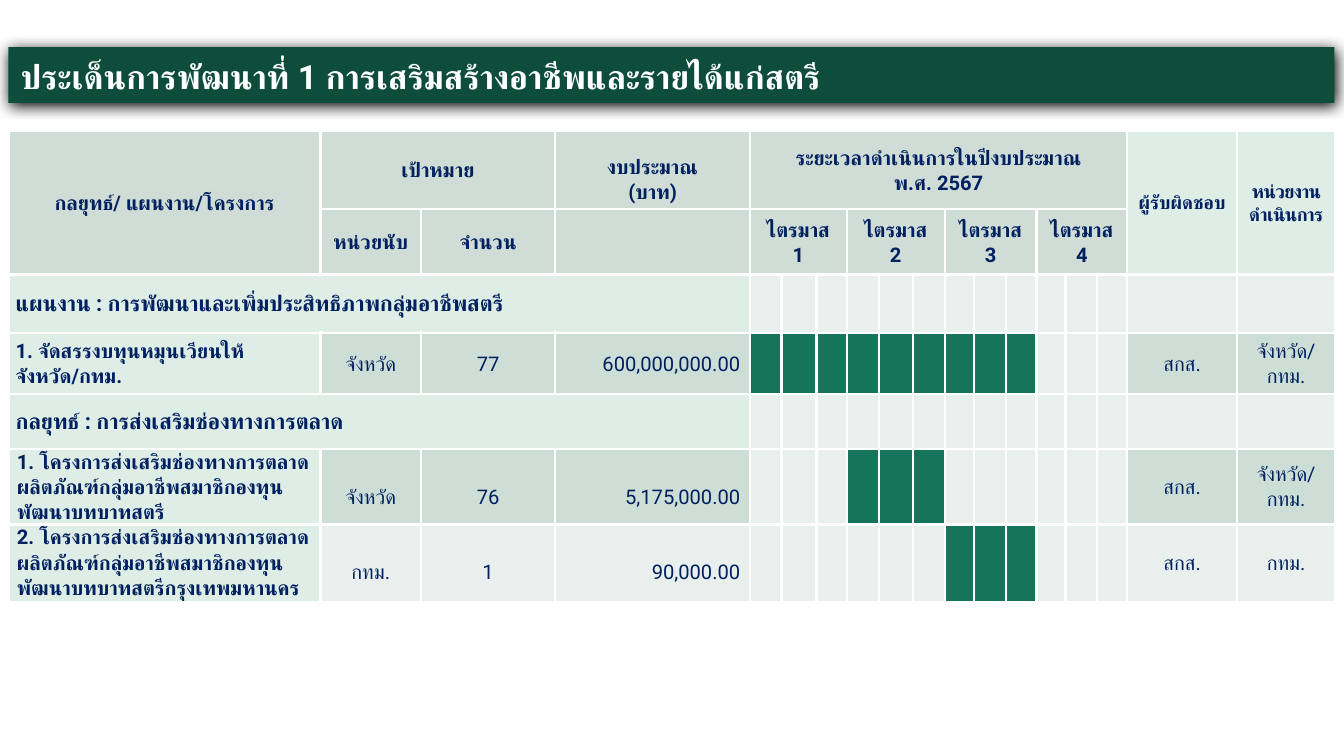
import pptx
import pptx.dml.color
import pptx.enum.text
import pptx.oxml.ns
import pptx.util
from lxml import etree

PP = pptx.enum.text.PP_ALIGN
ANCHOR = pptx.enum.text.MSO_ANCHOR
qn = pptx.oxml.ns.qn

UNIT = pptx.util.Inches(0.01)
LEFT, TITLE_TOP, TITLE_ROWS, TABLE_TOP = 7, 39, 46, 108
MONTHS = [26, 29, 25, 27, 28, 26, 24, 27, 25, 23, 26, 25]
COLS = [258, 83, 111, 161, *MONTHS, 91, 81]
ROWS = [65, 54, 48, 51, 45, 60, 64]
FIRST_MONTH, OWNER = 4, 16

COLORS = {
    "title": "0E4D3C",
    "white": "FFFFFF",
    "text": "002060",
    "header": "D0DDD7",
    "mint": "DEEDE6",
    "pale": "E8EFEC",
    "sage": "CDDED6",
    "active": "16745A",
    "shadow": "000000",
}

HEADERS = [
    (0, 0, 2, 1, "กลยุทธ์/ แผนงาน/โครงการ"),
    (0, 1, 1, 2, "เป้าหมาย"),
    (0, 4, 1, 12, "ระยะเวลาดำเนินการในปีงบประมาณ\nพ.ศ. 2567"),
    (1, 1, 1, 1, "หน่วยนับ"),
    (1, 2, 1, 1, "จำนวน"),
]

SECTIONS = {
    2: "แผนงาน : การพัฒนาและเพิ่มประสิทธิภาพกลุ่มอาชีพสตรี",
    4: "กลยุทธ์ : การส่งเสริมช่องทางการตลาด",
}

PROJECTS = [
    (3, "1. จัดสรรงบทุนหมุนเวียนให้จังหวัด/กทม.", "จังหวัด", "77",
     "600,000,000.00", "จังหวัด/กทม.", range(9), "sage"),
    (5, "1. โครงการส่งเสริมช่องทางการตลาดผลิตภัณฑ์กลุ่มอาชีพสมาชิกองทุนพัฒนาบทบาทสตรี",
     "จังหวัด", "76", "5,175,000.00", "จังหวัด/กทม.", range(3, 6), "sage"),
    (6, "2. โครงการส่งเสริมช่องทางการตลาดผลิตภัณฑ์กลุ่มอาชีพสมาชิกองทุนพัฒนาบทบาทสตรีกรุงเทพมหานคร",
     "กทม.", "1", "90,000.00", "กทม.", range(6, 9), "pale"),
]


def rgb(name):
    return pptx.dml.color.RGBColor.from_string(COLORS[name])


def write(tf, text, size=12, bold=True, color="text", align=PP.CENTER, spacing=None):
    tf.word_wrap = True
    for i, line in enumerate(text.split("\n")):
        p = tf.paragraphs[0] if i == 0 else tf.add_paragraph()
        p.alignment = align
        p.line_spacing = 1.07
        p.space_before = pptx.util.Pt(0)
        r = p.add_run()
        r.text = line
        r.font.size = pptx.util.Pt(size)
        r.font.bold = bold
        r.font.color.rgb = rgb(color)
        r.font.name = "Roboto"
        rPr = r.font._element
        etree.SubElement(rPr, qn("a:cs"), typeface="Roboto")
        if spacing is not None:
            rPr.set("spc", str(round(spacing * 100)))


def fill_cell(cell, color):
    cell.fill.solid()
    cell.fill.fore_color.rgb = rgb(color)


def border_cell(cell):
    tcPr = cell._tc.get_or_add_tcPr()
    for i, side in enumerate(("lnL", "lnR", "lnT", "lnB")):
        ln = etree.Element(qn(f"a:{side}"), w=str(pptx.util.Pt(1.5)))
        fill = etree.SubElement(ln, qn("a:solidFill"))
        etree.SubElement(fill, qn("a:srgbClr"), val=COLORS["white"])
        tcPr.insert(i, ln)


def write_cell(cell, text, anchor=ANCHOR.MIDDLE, top=0, bottom=0, side=6, **fmt):
    cell.vertical_anchor = anchor
    cell.margin_left = cell.margin_right = side * UNIT
    cell.margin_top, cell.margin_bottom = top * UNIT, bottom * UNIT
    write(cell.text_frame, text, **fmt)


def span(tbl, row, col, rows=1, cols=1):
    cell = tbl.cell(row, col)
    if rows * cols > 1:
        cell.merge(tbl.cell(row + rows - 1, col + cols - 1))
    return cell


def add_title(s, text):
    sp = s.shapes.title
    sp.left, sp.top = LEFT * UNIT, TITLE_TOP * UNIT
    sp.width, sp.height = sum(COLS) * UNIT, TITLE_ROWS * UNIT
    sp.fill.solid()
    sp.fill.fore_color.rgb = rgb("title")
    sp.line.fill.background()
    sp.shadow.inherit = False
    effects = sp._element.spPr.find(qn("a:effectLst"))
    shadow = etree.SubElement(effects, qn("a:outerShdw"), blurRad=str(pptx.util.Pt(8.5)),
                              dist=str(pptx.util.Pt(1)), dir="5400000", rotWithShape="0")
    etree.SubElement(shadow, qn("a:srgbClr"), val=COLORS["shadow"])
    tf = sp.text_frame
    tf.auto_size = pptx.enum.text.MSO_AUTO_SIZE.NONE
    tf.vertical_anchor = ANCHOR.MIDDLE
    write(tf, text, size=20, color="white", align=PP.LEFT)


def add_grid(s):
    tbl = s.shapes.add_table(len(ROWS), len(COLS), LEFT * UNIT, TABLE_TOP * UNIT,
                             sum(COLS) * UNIT, sum(ROWS) * UNIT).table
    tbl.first_row = tbl.horz_banding = False
    for column, width in zip(tbl.columns, COLS):
        column.width = width * UNIT
    for row, height in zip(tbl.rows, ROWS):
        row.height = height * UNIT
    for i in range(len(ROWS)):
        for j in range(len(COLS)):
            cell = tbl.cell(i, j)
            fill_cell(cell, "pale" if i > 1 else "mint" if j >= OWNER else "header")
            border_cell(cell)
    return tbl


def add_headers(tbl):
    for row, col, rows, cols, text in HEADERS:
        write_cell(span(tbl, row, col, rows, cols), text)
    write_cell(tbl.cell(0, 3), "งบประมาณ\n(บาท)", anchor=ANCHOR.BOTTOM, bottom=4)
    for quarter in range(4):
        write_cell(span(tbl, 1, FIRST_MONTH + 3 * quarter, cols=3), f"ไตรมาส\n{quarter + 1}")
    write_cell(span(tbl, 0, OWNER, rows=2), "ผู้รับผิดชอบ", size=11)
    write_cell(span(tbl, 0, OWNER + 1, rows=2), "หน่วยงานดำเนินการ", size=11, spacing=-0.4)


def add_section(tbl, row, text):
    cell = span(tbl, row, 0, cols=FIRST_MONTH)
    fill_cell(cell, "mint")
    write_cell(cell, text, size=13, align=PP.LEFT)


def add_project(tbl, row, name, unit, count, budget, agency, months, color):
    tall = ROWS[row] >= 60
    place = {"anchor": ANCHOR.TOP, "top": 29} if tall else {}
    fill_cell(tbl.cell(row, 0), "mint")
    write_cell(tbl.cell(row, 0), name, anchor=ANCHOR.TOP if tall else ANCHOR.MIDDLE,
               side=7 if tall else 6, align=PP.LEFT)
    for col, text in enumerate((unit, count, budget), 1):
        fill_cell(tbl.cell(row, col), color)
        write_cell(tbl.cell(row, col), text, side=8, bold=False,
                   align=PP.RIGHT if text == budget else PP.CENTER, **place)
    for month in months:
        fill_cell(tbl.cell(row, FIRST_MONTH + month), "active")
    for col, text in enumerate(("สกส.", agency), OWNER):
        fill_cell(tbl.cell(row, col), color)
        write_cell(tbl.cell(row, col), text, bold=False)


def main():
    prs = pptx.Presentation()
    prs.slide_width, prs.slide_height = 1111 * UNIT, 625 * UNIT
    s = prs.slides.add_slide(prs.slide_layouts[5])
    add_title(s, "ประเด็นการพัฒนาที่ 1 การเสริมสร้างอาชีพและรายได้แก่สตรี")
    tbl = add_grid(s)
    add_headers(tbl)
    for row, text in SECTIONS.items():
        add_section(tbl, row, text)
    for project in PROJECTS:
        add_project(tbl, *project)
    prs.save("out.pptx")


if __name__ == "__main__":
    main()
